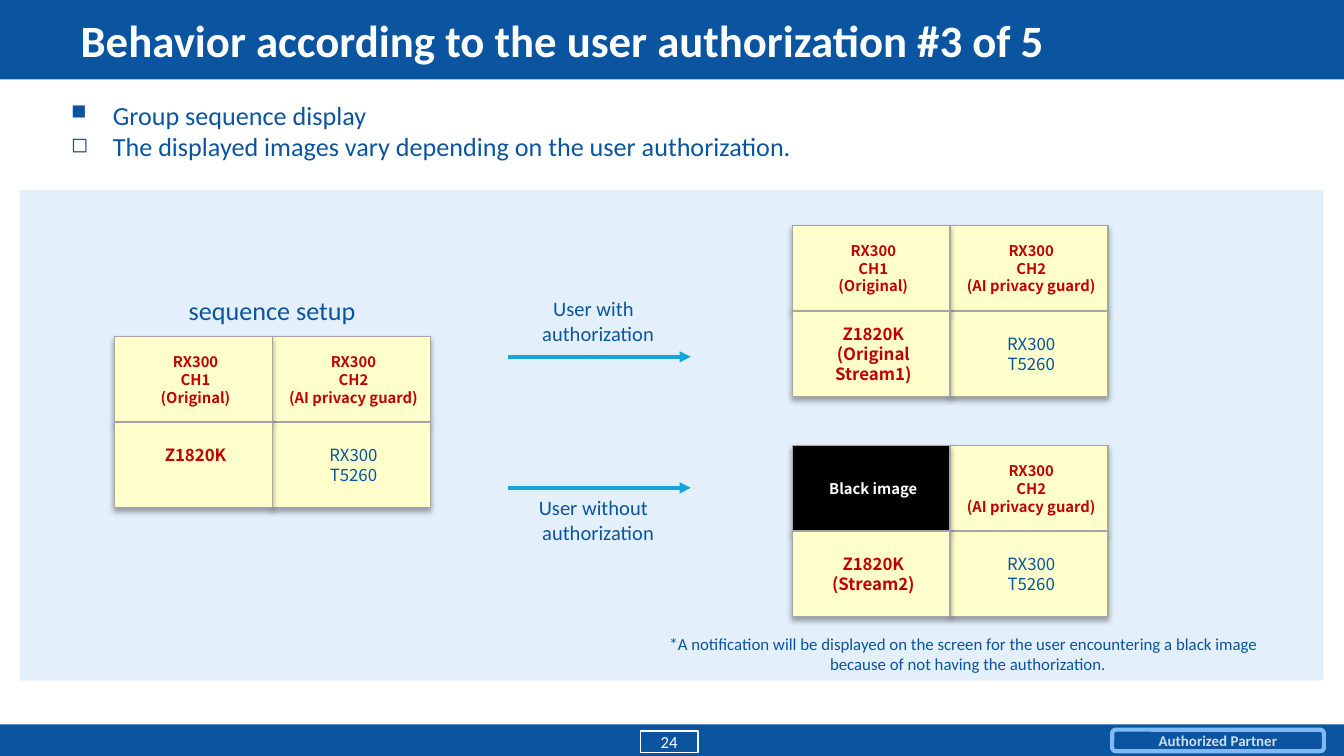
from lxml import etree
from pptx import Presentation
from pptx import util as u
from pptx.dml.color import RGBColor
from pptx.enum import shapes, text
from pptx.oxml import parse_xml
from pptx.oxml.ns import nsdecls, qn

BLUE = RGBColor(0x0A, 0x54, 0xA0)
PALE = RGBColor(0xC9, 0xE1, 0xF8)
SKY = RGBColor(0x7F, 0xBA, 0xF7)
CYAN = RGBColor(0x14, 0xA6, 0xDB)
CREAM = RGBColor(0xFF, 0xFF, 0xCC)
GREY = RGBColor(0xA6, 0xA6, 0xA6)
RED = RGBColor(0xC0, 0x00, 0x00)
WHITE = RGBColor(0xFF, 0xFF, 0xFF)
BLACK = RGBColor(0x00, 0x00, 0x00)
SHADOW = (
    f'<a:effectLst {nsdecls("a")}>'
    '<a:outerShdw blurRad="40000" dist="23000" dir="5400000" rotWithShape="0">'
    '<a:srgbClr val="000000"><a:alpha val="35000"/></a:srgbClr>'
    '</a:outerShdw></a:effectLst>'
)

presentation = Presentation()
presentation.slide_width = u.Inches(10)
presentation.slide_height = presentation.slide_width * 9 // 16
slide = presentation.slides.add_slide(presentation.slide_layouts[5])
UNIT = presentation.slide_width / 100


def add_box(parent, kind, place, fill=None, line=None, line_width=0.75):
    shape = parent.add_shape(kind, *(round(value * UNIT) for value in place))
    shape.shadow.inherit = False
    for paint, color in ((shape.fill, fill), (shape.line.fill, line)):
        if color is None:
            paint.background()
        else:
            paint.solid()
            paint.fore_color.rgb = color
    if line is not None:
        shape.line.width = u.Pt(line_width)
    return shape


def write(shape, lines, size, color, bold=False, font="Calibri", align=text.PP_ALIGN.CENTER):
    frame = shape.text_frame
    frame.text = "\n".join(lines)
    frame.word_wrap = True
    for paragraph in frame.paragraphs:
        paragraph.alignment = align
        paragraph.font.name = font
        paragraph.font.size = u.Pt(size)
        paragraph.font.bold = bold
        paragraph.font.color.rgb = color
    return frame


RECTANGLE = shapes.MSO_SHAPE.RECTANGLE
add_box(slide.shapes, RECTANGLE, (0, 53.9, 100, 2.35), BLUE)
add_box(slide.shapes, RECTANGLE, (0, 0, 100, 5.9), BLUE)
badge = add_box(slide.shapes, shapes.MSO_SHAPE.ROUNDED_RECTANGLE, (82.75, 54.3, 15.75, 1.6), None, SKY, 2.25)
page_box = add_box(slide.shapes, RECTANGLE, (47.65, 54.4, 4.3, 1.6), None, WHITE)
write(badge, ["Authorized Partner"], 8, PALE, True)
write(page_box, ["24"], 9, WHITE)
panel = add_box(slide.shapes, RECTANGLE, (1.5, 14.15, 96.95, 36.5), PALE)
panel_color = panel.fill._xPr.find(qn("a:solidFill"))[0]
etree.SubElement(panel_color, qn("a:alpha")).set("val", "50000")

title = slide.shapes.title
title.left, title.top, title.width, title.height = (round(v * UNIT) for v in (5, 0.1, 80.7, 5.7))
title_frame = write(title, ["Behavior according to the user authorization #3 of 5"], 24, WHITE, True,
                    align=text.PP_ALIGN.LEFT)
title_frame.vertical_anchor = text.MSO_ANCHOR.MIDDLE
title_frame.auto_size = text.MSO_AUTO_SIZE.NONE
title.element.getparent().append(title.element)

bullet_lines = ["Group sequence display",
                "The displayed images vary depending on the user authorization."]
note = ("*A notification will be displayed on the screen for the user encountering "
        "a black image because of not having the authorization.")
labels = [
    ((5, 7.1, 54.8, 5.3), bullet_lines, 14, "■◻"),
    ((3.5, 21.6, 33.5, 3), ["sequence setup"], 14, ""),
    ((36.7, 21.75, 14.9, 4.3), ["User with authorization"], 11, ""),
    ((36.7, 36.55, 14.9, 4.3), ["User without authorization"], 11, ""),
    ((48, 46.85, 47.3, 3.6), [note], 9, ""),
]
for place, lines, size, bullets in labels:
    label = slide.shapes.add_textbox(*(round(value * UNIT) for value in place))
    align = text.PP_ALIGN.LEFT if bullets else text.PP_ALIGN.CENTER
    frame = write(label, lines, size, BLUE, align=align)
    frame.margin_left = frame.margin_right = u.Inches(0.03)
    frame.margin_top = frame.margin_bottom = u.Inches(0.03)
    indent = u.Inches(0.31 if bullets else 0.07)
    for index, paragraph in enumerate(frame.paragraphs):
        properties = paragraph._p.get_or_add_pPr()
        properties.set("marL", str(indent))
        properties.set("indent", str(-indent))
        if bullets:
            for markup in ('buSzPct {} val="80000"', f'buChar {{}} char="{bullets[index]}"'):
                bullet = parse_xml(f'<a:{markup.format(nsdecls("a"))}/>')
                properties.insert_element_before(bullet, "a:tabLst", "a:defRPr", "a:extLst")

for level in (26.55, 36.3):
    arrow = slide.shapes.add_connector(
        shapes.MSO_CONNECTOR.STRAIGHT, *(round(value * UNIT) for value in (37.8, level, 51.4, level)))
    arrow.line.color.rgb = CYAN
    arrow.line.width = u.Pt(2)
    etree.SubElement(arrow.line._get_or_add_ln(), qn("a:tailEnd")).set("type", "triangle")
    etree.SubElement(arrow._element.spPr, qn("a:effectLst"))

CELL_WIDTH, CELL_HEIGHT = 11.75, 6.37
channel_1 = (["RX300", "CH1", "(Original)"], 7.9, RED, True, CREAM)
channel_2 = (["RX300", "CH2", "(AI privacy guard)"], 7.9, RED, True, CREAM)
black_image = (["Black image"], 7.9, WHITE, True, BLACK)
recorder = (["RX300", "T5260"], 9, BLUE, False, CREAM)
camera = (["Z1820K"], 9, RED, True, CREAM)
camera_original = (["Z1820K", "(Original", "Stream1)"], 9, RED, True, CREAM)
camera_second = (["Z1820K", "(Stream2)"], 9, RED, True, CREAM)
screens = [
    (8.52, 25.05, [channel_1, channel_2, camera, recorder]),
    (58.95, 33.16, [black_image, channel_2, camera_second, recorder]),
    (58.95, 16.77, [channel_1, channel_2, camera_original, recorder]),
]
for left, top, cells in screens:
    group = slide.shapes.add_group_shape()
    for index in (1, 3, 0, 2):
        lines, size, color, bold, fill = cells[index]
        row, column = divmod(index, 2)
        place = (left + column * CELL_WIDTH, top + row * CELL_HEIGHT, CELL_WIDTH, CELL_HEIGHT)
        cell = add_box(group.shapes, RECTANGLE, place, fill, GREY)
        cell._element.spPr.replace(cell._element.spPr.find(qn("a:effectLst")), parse_xml(SHADOW))
        frame = write(cell, lines, size, color, bold, "Noto Sans CJK JP")
        frame.vertical_anchor = text.MSO_ANCHOR.MIDDLE
        frame.margin_left = u.Inches(0.06)
        frame.margin_top = frame.margin_right = u.Inches(0.03)
        frame.margin_bottom = u.Inches(0.18 if cells[index] is camera else 0.03)
        for paragraph in frame.paragraphs:
            paragraph.line_spacing = u.Pt(round(size * 1.2, 1))

presentation.save("out.pptx")
